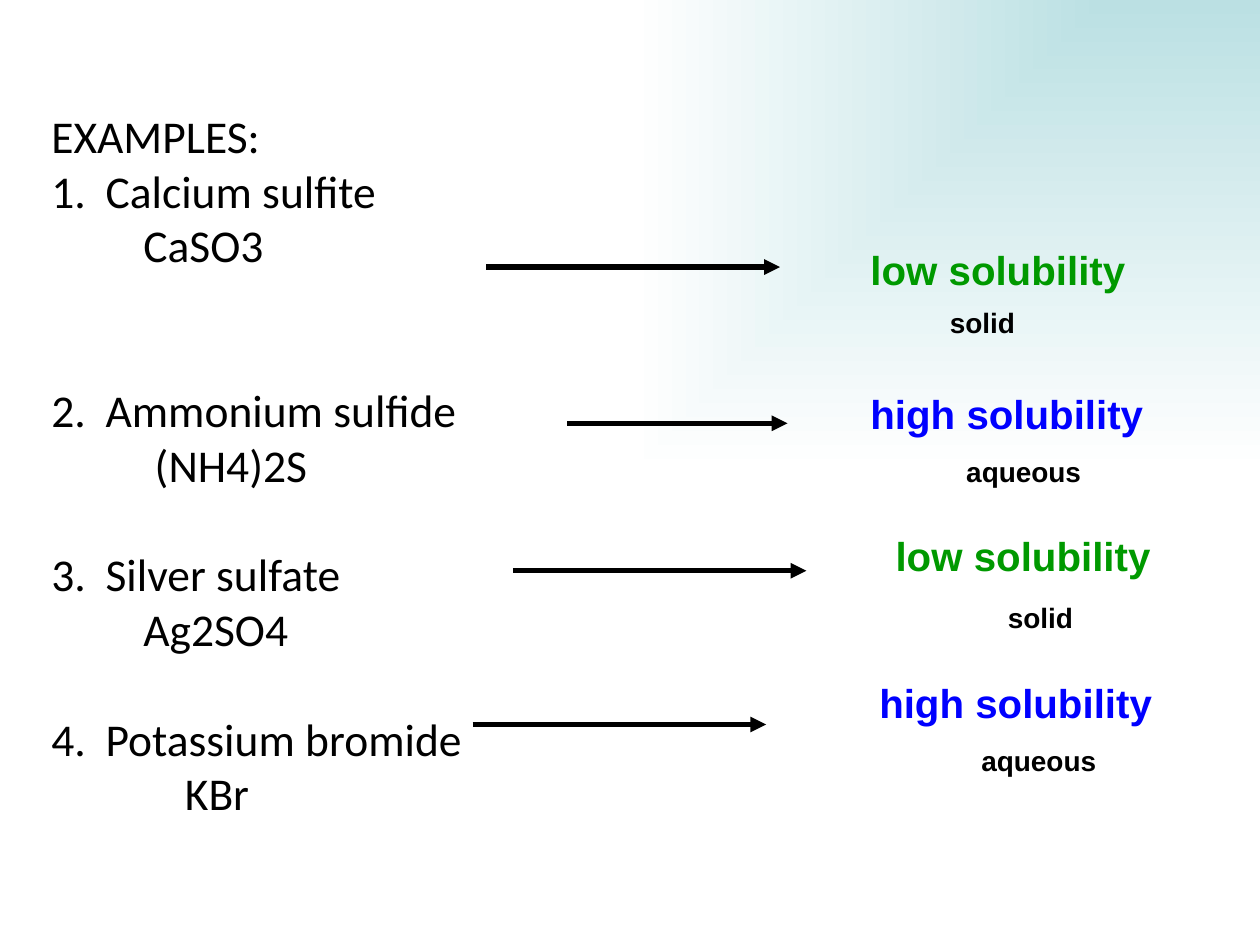
from lxml import etree
from pptx import Presentation
from pptx.dml.color import RGBColor
from pptx.enum.shapes import MSO_CONNECTOR
from pptx.oxml.ns import qn
from pptx.util import Inches, Pt

STRAIGHT = MSO_CONNECTOR.STRAIGHT

THEME = {
    "list_font": "Calibri", "label_font": "Arial",
    "list_size": 26, "solubility_size": 23, "state_size": 16,
    "text": "000000", "low": "009900", "high": "0000FF",
    "glow": "BBE0E3", "page": "FFFFFF", "arrow_width": 3,
}

HEADING = "EXAMPLES:"
# name, formula, formula indent, lines skipped before the entry
COMPOUNDS = [
    ("Calcium sulfite", "CaSO3", 0.73, 0),
    ("Ammonium sulfide", "(NH4)2S", 0.82, 2),
    ("Silver sulfate", "Ag2SO4", 0.73, 1),
    ("Potassium bromide", "KBr", 1.06, 1),
]
# level, arrow (left, right, y), solubility (left, top), state (left, top)
RESULTS = [
    ("low", (3.86, 6.19, 2.12), (6.81, 1.9), (7.44, 2.38)),
    ("high", (4.5, 6.25, 3.36), (6.81, 3.04), (7.57, 3.56)),
    ("low", (4.07, 6.4, 4.53), (7.01, 4.17), (7.9, 4.72)),
    ("high", (3.75, 6.08, 5.75), (6.88, 5.33), (7.69, 5.85)),
]
# state of matter, width of solubility label, width of state label
LEVELS = {"low": ("solid", 3, 0.94), "high": ("aqueous", 3.19, 1.58)}
NUMBER_INDENT = 0.43
LINE_PITCH = 31.5


def set_background(s):
    """Gradient that spreads from the top right corner."""
    fill = s.background.fill
    fill.gradient()
    for stop, position, key in zip(fill.gradient_stops, (0, 1), ("glow", "page")):
        stop.position = position
        stop.color.rgb = RGBColor.from_string(THEME[key])
    grad = s._element.find(".//" + qn("a:gradFill"))
    grad.remove(grad.find(qn("a:lin")))
    path = etree.SubElement(grad, qn("a:path"), path="rect")
    etree.SubElement(path, qn("a:fillToRect"), l="100000", b="100000")


def add_box(s, left, top, width, height):
    box = s.shapes.add_textbox(*map(Inches, (left, top, width, height)))
    tf = box.text_frame
    tf.word_wrap = True
    return tf


def write(p, text, font, size, color, bold=False):
    p.text = text
    p.font.name = font
    p.font.size = Pt(size)
    p.font.bold = bold
    p.font.color.rgb = RGBColor.from_string(color)


def add_list(s):
    tf = add_box(s, 0.31, 0.81, 5.5, 5.79)
    lines = [(HEADING, 0, 0, 0)]
    for number, (name, formula, indent, skipped) in enumerate(COMPOUNDS, 1):
        lines.append((f"{number}.\t{name}", NUMBER_INDENT, -NUMBER_INDENT, skipped))
        lines.append((formula, indent, 0, 0))
    for i, (text, margin, first, skipped) in enumerate(lines):
        p = tf.add_paragraph() if i else tf.paragraphs[0]
        pPr = p._p.get_or_add_pPr()
        pPr.set("marL", str(Inches(margin)))
        pPr.set("indent", str(Inches(first)))
        if skipped:
            p.space_before = Pt(skipped * LINE_PITCH)
        write(p, text, THEME["list_font"], THEME["list_size"], THEME["text"])


def add_arrow(s, left, right, y):
    arrow = s.shapes.add_connector(STRAIGHT, *map(Inches, (left, y, right, y)))
    arrow.line.width = Pt(THEME["arrow_width"])
    arrow.line.color.rgb = RGBColor.from_string(THEME["text"])
    etree.SubElement(arrow.line._get_or_add_ln(), qn("a:tailEnd"), type="triangle")
    etree.SubElement(arrow._element.spPr, qn("a:effectLst"))


def add_label(s, text, at, width, height, size, color):
    p = add_box(s, *at, width, height).paragraphs[0]
    write(p, text, THEME["label_font"], size, color, bold=True)


def main():
    prs = Presentation()
    prs.slide_width, prs.slide_height = Inches(10), Inches(7.5)
    s = prs.slides.add_slide(prs.slide_layouts[6])
    set_background(s)
    add_list(s)
    for level, arrow, solubility_at, state_at in RESULTS:
        state, solubility_width, state_width = LEVELS[level]
        add_arrow(s, *arrow)
        add_label(s, f"{level} solubility", solubility_at, solubility_width, 0.49,
                  THEME["solubility_size"], THEME[level])
        add_label(s, state, state_at, state_width, 0.37,
                  THEME["state_size"], THEME["text"])
    prs.save("out.pptx")


if __name__ == "__main__":
    main()
